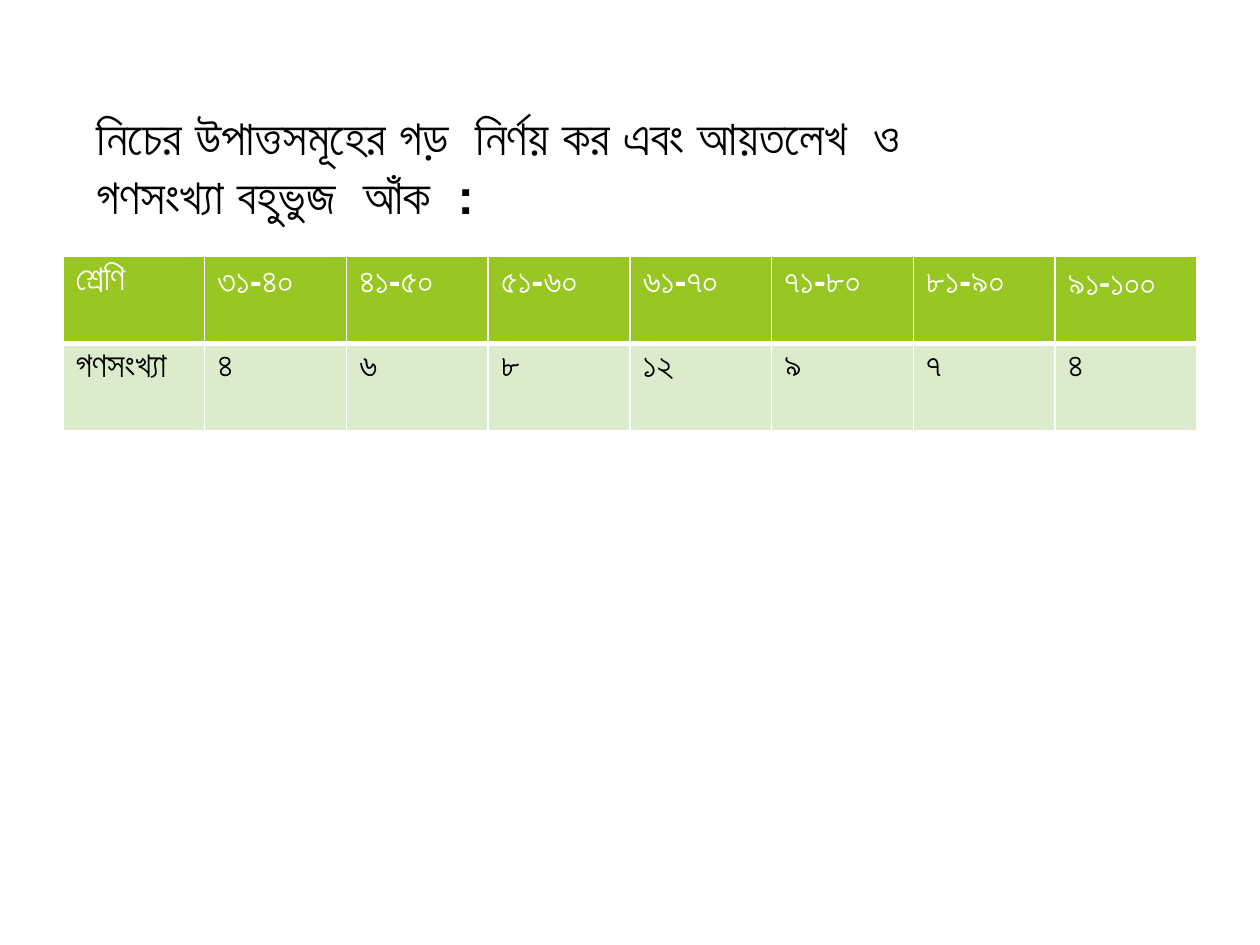
from lxml.etree import SubElement
from pptx import Presentation
from pptx.dml.color import RGBColor
from pptx.enum.text import MSO_AUTO_SIZE
from pptx.oxml.ns import qn
from pptx.util import Inches, Pt

BLACK = RGBColor(0x00, 0x00, 0x00)
WHITE = RGBColor(0xFF, 0xFF, 0xFF)
GREEN = RGBColor(0x98, 0xC7, 0x23)
PALE_GREEN = RGBColor(0xDD, 0xEB, 0xCD)

QUESTION = "নিচের উপাত্তসমূহের গড়  নির্ণয় কর এবং আয়তলেখ  ও গণসংখ্যা বহুভুজ  আঁক  :"
CLASSES = ["শ্রেণি", "৩১-৪০", "৪১-৫০", "৫১-৬০", "৬১-৭০", "৭১-৮০", "৮১-৯০", "৯১-১০০"]
FREQUENCIES = ["গণসংখ্যা", "৪", "৬", "৮", "১২", "৯", "৭", "৪"]


def write_text(tf, text, size=20, color=BLACK, bold=True, font="Arial"):
    r = tf.paragraphs[0].add_run()
    r.text = text
    r.font.name = font
    r.font.size = Pt(size)
    r.font.bold = bold
    r.font.color.rgb = color


def set_borders(cell, color=WHITE, **widths):
    """Draw the L, R, T and B borders, in the order the schema asks for."""
    tcPr = cell._tc.get_or_add_tcPr()
    for side in "LRTB":
        ln = SubElement(tcPr, qn(f"a:ln{side}"), w=str(Pt(widths.get(side, 1))))
        fill = SubElement(ln, qn("a:solidFill"))
        SubElement(fill, qn("a:srgbClr"), val=str(color))


def add_question(slide, left, top, width, height):
    sp = slide.shapes.add_textbox(left, top, width, height)
    tf = sp.text_frame
    tf.word_wrap = True
    tf.auto_size = MSO_AUTO_SIZE.SHAPE_TO_FIT_TEXT
    write_text(tf, QUESTION, size=28)


def add_frequency_table(slide, left, top, width, height):
    table = slide.shapes.add_table(2, len(CLASSES), left, top, width, height).table

    # Header row: class intervals, with a thick rule below
    for col, text in enumerate(CLASSES):
        cell = table.cell(0, col)
        set_borders(cell, B=3)
        cell.fill.solid()
        cell.fill.fore_color.rgb = GREEN
        is_last = col == len(CLASSES) - 1
        write_text(cell.text_frame, text, color=WHITE,
                   font="Calibri" if is_last else "Arial")

    # Body row: frequencies
    for col, text in enumerate(FREQUENCIES):
        cell = table.cell(1, col)
        set_borders(cell, T=3)
        cell.fill.solid()
        cell.fill.fore_color.rgb = PALE_GREEN
        write_text(cell.text_frame, text, bold=col > 0)


def main():
    prs = Presentation()
    prs.slide_width = Inches(10)
    prs.slide_height = Inches(7.5)
    slide = prs.slides.add_slide(prs.slide_layouts[6])
    add_question(slide, Inches(0.67), Inches(0.8), Inches(6.75), Inches(1.04))
    add_frequency_table(slide, Inches(0.5), Inches(2.03), Inches(9), Inches(1.39))
    prs.save("out.pptx")


if __name__ == "__main__":
    main()
